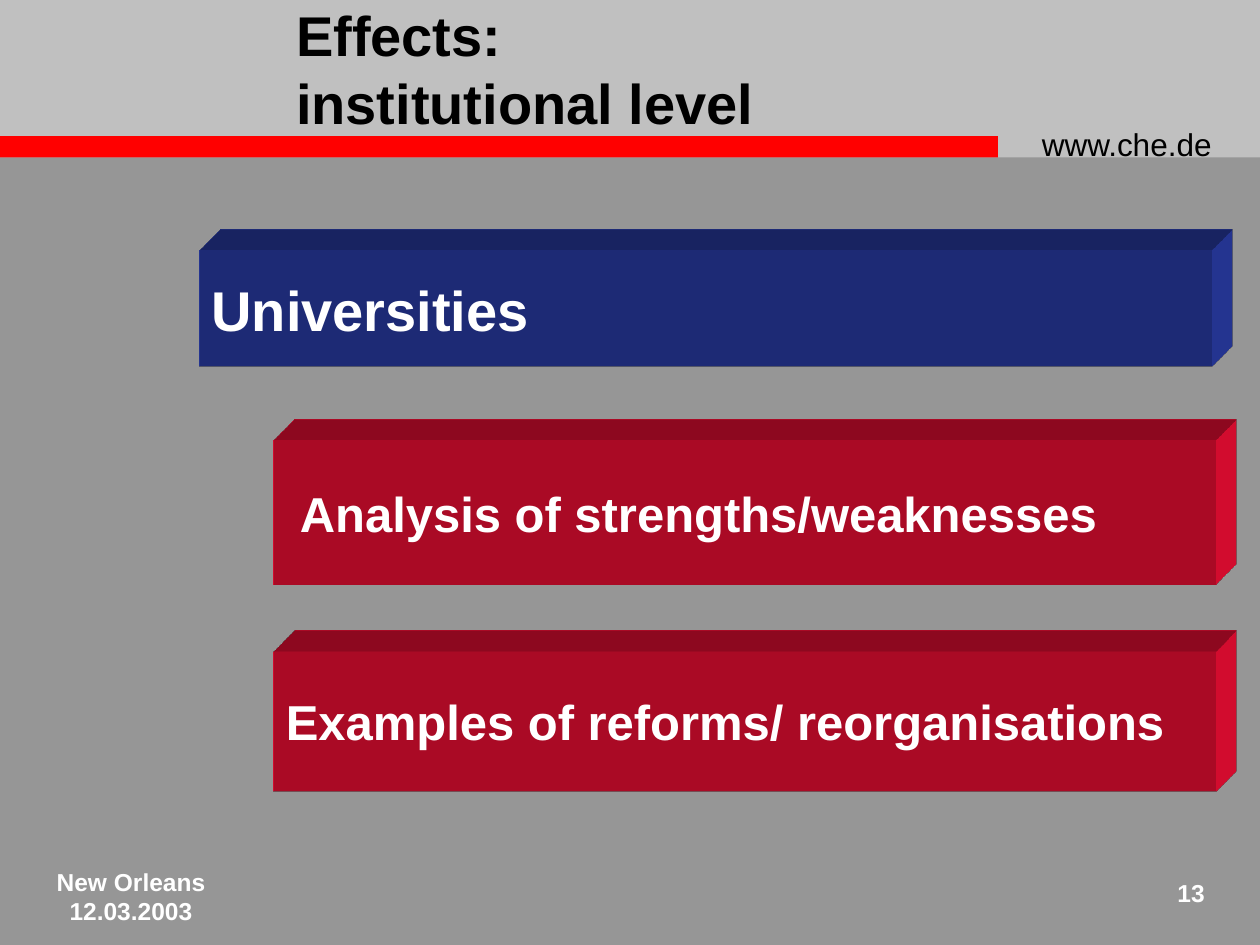
from lxml import etree
from pptx import Presentation
from pptx.dml.color import RGBColor
from pptx.enum import shapes, text
from pptx.oxml import ns
from pptx.util import Inches, Pt

COLORS = {"back": "969696", "band": "C0C0C0", "rule": "FF0000",
          "blue": "293BA5", "red": "F00E34",
          "dark": "000000", "light": "FFFFFF"}
ALIGN = text.PP_ALIGN


def color(name):
    return RGBColor.from_string(COLORS[name])


def write(shape, lines, size, ink="light", bold=True, align=ALIGN.LEFT):
    frame = shape.text_frame
    frame.text = lines
    for par in frame.paragraphs:
        par.alignment = align
        font = par.font
        font.name, font.size, font.bold = "Arial", Pt(size), bold
        font.color.rgb = color(ink)


def rect(slide, box, fill):
    shape = slide.shapes.add_shape(shapes.MSO_SHAPE.RECTANGLE,
                                   *map(Inches, box))
    shape.shadow.inherit = False
    shape.fill.solid()
    shape.fill.fore_color.rgb = color(fill)
    shape.line.fill.background()
    return shape


def label(slide, box, lines, size, wrap=True, **style):
    shape = slide.shapes.add_textbox(*map(Inches, box))
    shape.text_frame.word_wrap = wrap
    write(shape, lines, size, **style)


def extrude(shape, fill):
    """Give the shape depth towards the top right."""
    uri = ns.nsdecls("a")
    for xml in (
        f'<a:scene3d {uri}><a:camera prst="legacyObliqueTopRight"/>'
        '<a:lightRig rig="legacyFlat3" dir="b"/></a:scene3d>',
        f'<a:sp3d {uri} extrusionH="430200" prstMaterial="legacyMatte">'
        f'<a:extrusionClr><a:srgbClr val="{COLORS[fill]}"/></a:extrusionClr>'
        '</a:sp3d>',
    ):
        shape._element.spPr.append(etree.fromstring(xml))


def bar(slide, box, words, fill, size, inset=0.1, wrap=True):
    shape = rect(slide, box, fill)
    extrude(shape, fill)
    frame = shape.text_frame
    frame.word_wrap = wrap
    frame.vertical_anchor = text.MSO_ANCHOR.MIDDLE
    frame.margin_left = Inches(inset)
    write(shape, words, size)


def header(slide, box):
    left, top, width, height = box
    rule = 0.17
    rect(slide, box, "band")
    rect(slide, (left, top + height - rule, 7.92, rule), "rule")
    label(slide, (left + 8.17, top + 0.94, 1.75, 0.4), "www.che.de", 18,
          ink="dark", bold=False)
    title = slide.shapes.title
    title.left, title.top = Inches(left + 2.25), Inches(top)
    title.width, title.height = Inches(5.92), Inches(height - rule)
    title.text_frame.vertical_anchor = text.MSO_ANCHOR.MIDDLE
    title.text_frame.auto_size = text.MSO_AUTO_SIZE.NONE
    write(title, "Effects:\vinstitutional level", 32, ink="dark")
    # Bring the title in front of the band
    slide.shapes._spTree.append(title._element)


def bars(slide, left, top):
    bar(slide, (left, top, 8.04, 0.92), "Universities", "blue", 32,
        wrap=False)
    items = [("Analysis of strengths/weaknesses", 1.51, 1.14, 0.21),
             ("Examples of reforms/ reorganisations", 3.18, 1.11, 0.1)]
    for words, drop, height, inset in items:
        bar(slide, (left + 0.59, top + drop, 7.48, height), words, "red",
            28, inset)


def footer(slide, left, top):
    label(slide, (left, top, 2.08, 0.5), "New Orleans\n12.03.2003", 14,
          align=ALIGN.CENTER)
    label(slide, (left + 9.08, top + 0.09, 0.58, 0.42), "13", 14,
          align=ALIGN.RIGHT)


def main():
    deck = Presentation()
    deck.slide_width, deck.slide_height = Inches(10), Inches(7.5)
    slide = deck.slides.add_slide(deck.slide_layouts[5])
    slide.background.fill.solid()
    slide.background.fill.fore_color.rgb = color("back")
    header(slide, (0, 0, 10, 1.25))
    bars(slide, 1.58, 1.99)
    footer(slide, 0, 6.83)
    deck.save("out.pptx")


if __name__ == "__main__":
    main()
